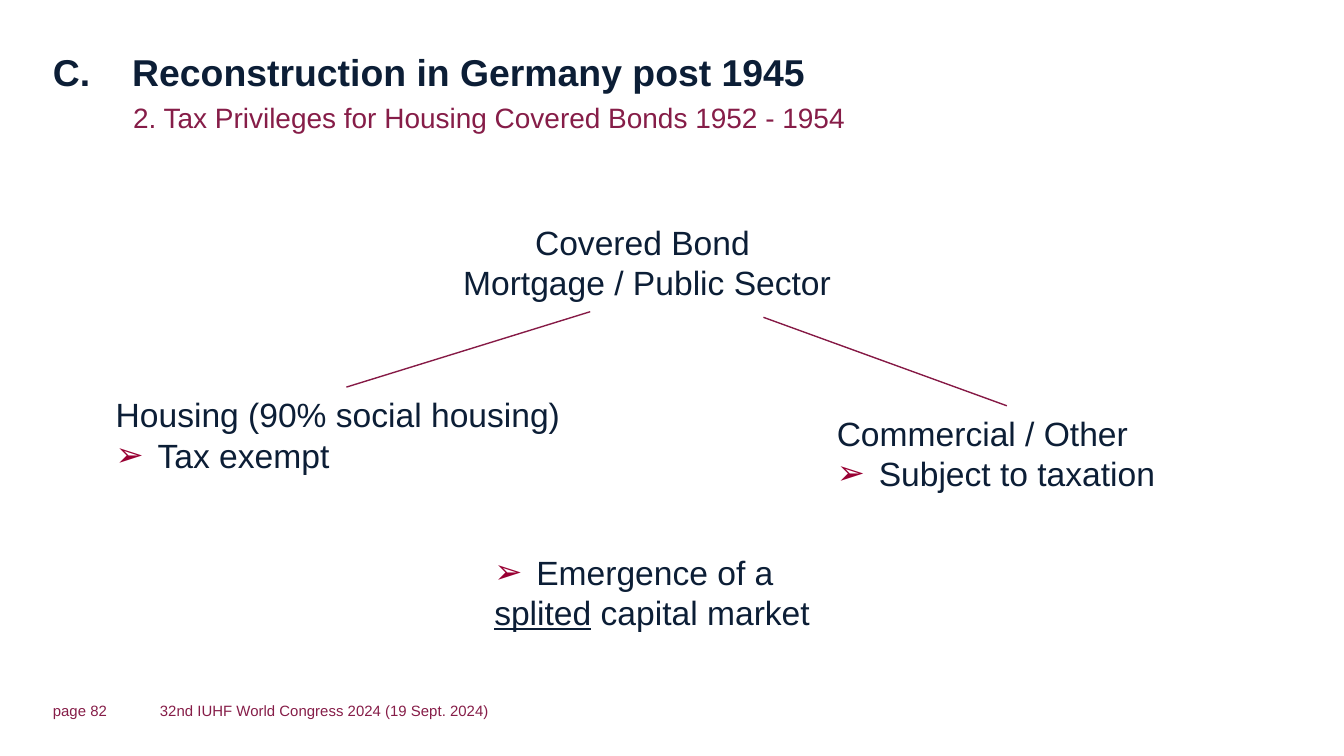
"""Builds the slide on tax privileges for German housing covered bonds."""
import lxml.etree
import pptx
import pptx.dml.color
import pptx.enum.shapes
import pptx.enum.text
import pptx.oxml.ns
import pptx.util

Pt = pptx.util.Pt
ALIGN = pptx.enum.text.PP_ALIGN
ANCHOR = pptx.enum.text.MSO_ANCHOR
NAVY = pptx.dml.color.RGBColor(0x0C, 0x1E, 0x36)
WINE = pptx.dml.color.RGBColor(0x86, 0x1D, 0x48)
BRANCH = pptx.dml.color.RGBColor(0x86, 0x1A, 0x46)
BULLET = pptx.dml.color.RGBColor(0x99, 0x00, 0x33)


class Sheet:
    """Holds the style and the current slide."""

    font = "Arial"
    bullet_indent = 22.5

    def __init__(self, deck):
        self.page = deck.slides.add_slide(deck.slide_layouts[6])

    def frame(self, left, top, width, height, margins=(7.2, 3.6), anchor=ANCHOR.TOP):
        box = self.page.shapes.add_textbox(Pt(left), Pt(top), Pt(width), Pt(height))
        frame = box.text_frame
        frame.word_wrap = True
        frame.vertical_anchor = anchor
        frame.margin_left = frame.margin_right = Pt(margins[0])
        frame.margin_top = frame.margin_bottom = Pt(margins[1])
        return frame

    def hang(self, para, indent):
        props = para._p.get_or_add_pPr()
        props.set("marL", str(Pt(indent)))
        props.set("indent", str(-Pt(indent)))
        return props

    def bullet(self, para):
        props = self.hang(para, self.bullet_indent)
        qn = pptx.oxml.ns.qn
        color = lxml.etree.SubElement(props, qn("a:buClr"))
        lxml.etree.SubElement(color, qn("a:srgbClr"), val=str(BULLET))
        lxml.etree.SubElement(props, qn("a:buFont"), typeface=self.font)
        lxml.etree.SubElement(props, qn("a:buChar"), char="➢")

    def style(self, para, size, color, bold=False):
        para.font.name = self.font
        para.font.size = Pt(size)
        para.font.color.rgb = color
        para.font.bold = bold

    def label(self, place, text, size, color, bold=False, indent=0, anchor=ANCHOR.TOP):
        para = self.frame(*place, margins=(0, 0), anchor=anchor).paragraphs[0]
        para.text = text
        if indent:
            self.hang(para, indent)
        self.style(para, size, color, bold)

    def node(self, place, lines, bullet_line=None, underlined="", align=ALIGN.LEFT):
        frame = self.frame(*place)
        for index, line in enumerate(lines):
            para = frame.paragraphs[0] if index == 0 else frame.add_paragraph()
            para.alignment = align
            if index == bullet_line:
                self.bullet(para)
            if underlined and line.startswith(underlined):
                span = para.add_run()
                span.text = underlined
                span.font.underline = True
                line = line[len(underlined):]
            para.add_run().text = line
            self.style(para, 18, NAVY)

    def branch(self, *ends):
        line = self.page.shapes.add_connector(
            pptx.enum.shapes.MSO_CONNECTOR.STRAIGHT, *map(Pt, ends))
        line.line.color.rgb = BRANCH
        line.line.width = Pt(0.75)
        lxml.etree.SubElement(line._element.spPr, pptx.oxml.ns.qn("a:effectLst"))


def main():
    deck = pptx.Presentation()
    deck.slide_width, deck.slide_height = Pt(720), Pt(405)
    sheet = Sheet(deck)

    sheet.label((28.35, 26.6, 664, 24.5), "C.\tReconstruction in Germany post 1945",
                20, NAVY, bold=True, indent=42.5)
    sheet.label((71.3, 54, 404, 18),
                "2. Tax Privileges for Housing Covered Bonds 1952 - 1954", 15, WINE)
    sheet.label((85.7, 376, 321, 9.4), "32nd IUHF World Congress 2024 (19 Sept. 2024)",
                8, WINE, anchor=ANCHOR.MIDDLE)
    sheet.label((28.35, 376, 45.4, 9.4), "page 82", 8, WINE, anchor=ANCHOR.MIDDLE)

    sheet.node((216, 115.2, 261.4, 51), ["Covered Bond ", "Mortgage / Public Sector"],
               align=ALIGN.CENTER)
    sheet.node((54.9, 207.7, 261.4, 51), ["Housing (90% social housing)", "Tax exempt"],
               bullet_line=1)
    sheet.node((441.2, 217.5, 196.6, 51), ["Commercial / Other", "Subject to taxation"],
               bullet_line=1)
    sheet.node((257.7, 291.9, 183.6, 51), ["Emergence of a", "splited capital market"],
               bullet_line=0, underlined="splited")

    sheet.branch(316.2, 167, 185.6, 207.4)
    sheet.branch(409, 170, 539.4, 217.4)
    deck.save("out.pptx")


if __name__ == "__main__":
    main()
